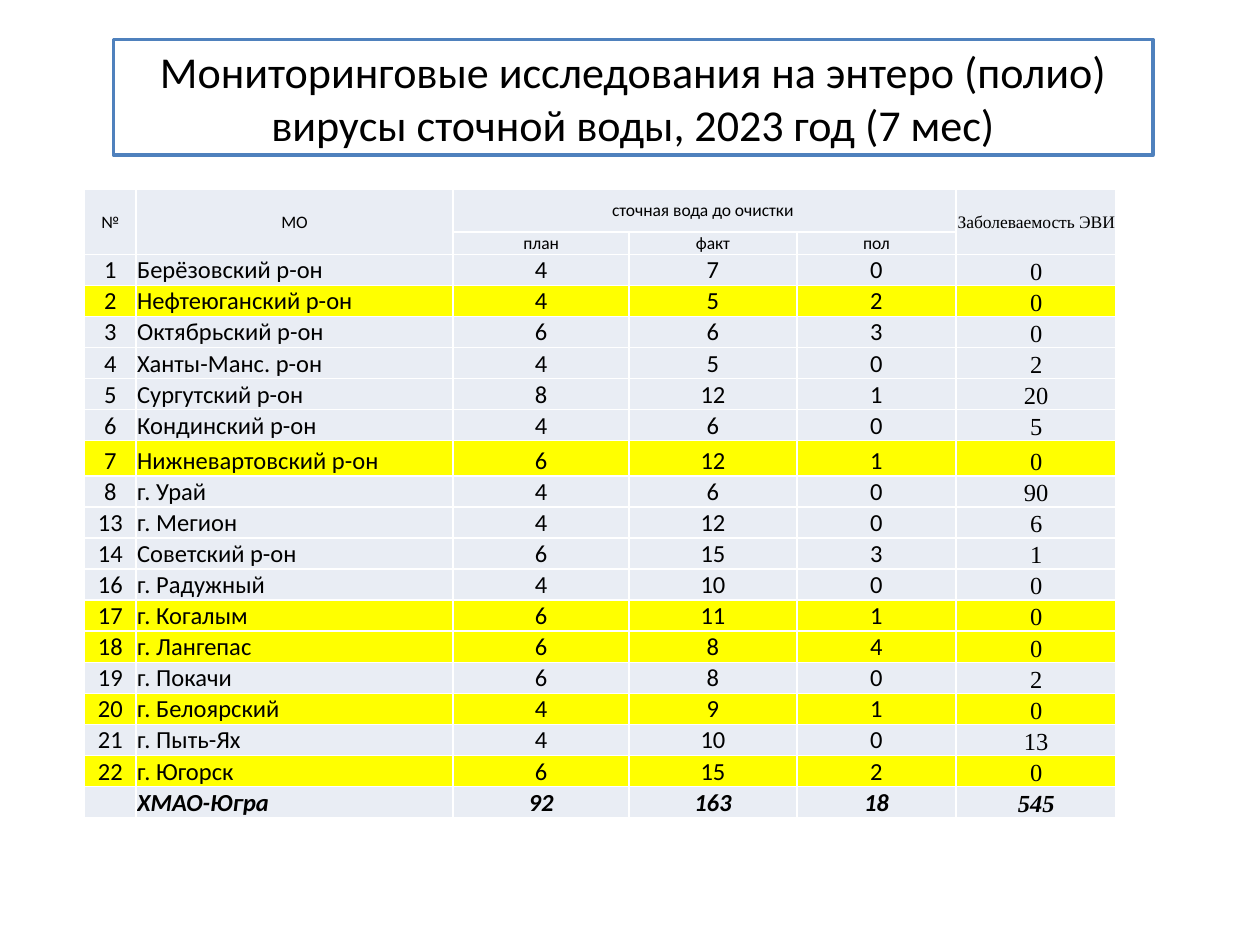
from lxml import etree
from pptx import Presentation
from pptx.dml.color import RGBColor
from pptx.enum.shapes import MSO_SHAPE
from pptx.enum.text import MSO_ANCHOR, PP_ALIGN
from pptx.oxml.ns import qn
from pptx.util import Pt

RECTANGLE = MSO_SHAPE.RECTANGLE
MIDDLE, BOTTOM = MSO_ANCHOR.MIDDLE, MSO_ANCHOR.BOTTOM
LEFT, CENTER = PP_ALIGN.LEFT, PP_ALIGN.CENTER

BLACK, WHITE, BLUE = "000000", "FFFFFF", "4F81BD"
PALE, YELLOW = "E9EDF4", "FFFF00"
SANS, SERIF = "Calibri", "Times New Roman"

TITLE = "Мониторинговые исследования на энтеро (полио) вирусы сточной воды, 2023 год (7 мес)"
COLUMN_WIDTHS = [29.3, 181.3, 100.6, 95.8, 91.1, 91.5]
NAME_COLUMN, INCIDENCE_COLUMN = 1, 5
HEADER_HEIGHTS = [24.5, 12.6]
DATA_HEIGHT, TALL_HEIGHT = 17.6, 20.2
TALL_NUMBER = "7"
HIGHLIGHTED_NUMBERS = {"2", "7", "17", "18", "20", "22"}

HEADERS = [
    ["№", "МО", "сточная вода до очистки ", "", "", "Заболеваемость ЭВИ "],
    ["", "", "план", "факт", "пол", ""],
]
HEADER_SPANS = [((0, 0), (1, 0)), ((0, 1), (1, 1)), ((0, 2), (0, 4)), ((0, 5), (1, 5))]
DISTRICTS = [
    ["1", "Берёзовский р-он", "4", "7", "0", "0"],
    ["2", "Нефтеюганский р-он", "4", "5", "2", "0"],
    ["3", "Октябрьский р-он", "6", "6", "3", "0"],
    ["4", "Ханты-Манс. р-он", "4", "5", "0", "2"],
    ["5", "Сургутский р-он", "8", "12", "1", "20"],
    ["6", "Кондинский р-он", "4", "6", "0", "5"],
    ["7", "Нижневартовский р-он", "6", "12", "1", "0"],
    ["8", "г. Урай", "4", "6", "0", "90"],
    ["13", "г. Мегион", "4", "12", "0", "6"],
    ["14", "Советский р-он", "6", "15", "3", "1"],
    ["16", "г. Радужный", "4", "10", "0", "0"],
    ["17", "г. Когалым", "6", "11", "1", "0"],
    ["18", "г. Лангепас", "6", "8", "4", "0"],
    ["19", "г. Покачи", "6", "8", "0", "2"],
    ["20", "г. Белоярский", "4", "9", "1", "0"],
    ["21", "г. Пыть-Ях", "4", "10", "0", "13"],
    ["22", "г. Югорск", "6", "15", "2", "0"],
]
TOTAL = ["", "ХМАО-Югра", "92", "163", "18", "545"]


def color(hex_string):
    return RGBColor.from_string(hex_string)


def fill_solid(item, hex_string):
    item.fill.solid()
    item.fill.fore_color.rgb = color(hex_string)


def format_text(text_frame, size, font_name, alignment, emphasis=False):
    paragraph = text_frame.paragraphs[0]
    paragraph.alignment = alignment
    for run in paragraph.runs:
        run.font.size = Pt(size)
        run.font.name = font_name
        run.font.color.rgb = color(BLACK)
        run.font.bold = run.font.italic = emphasis
    if not paragraph.runs:
        etree.SubElement(paragraph._p, qn("a:endParaRPr"), sz=str(size * 100))


def add_title(slide):
    shape = slide.shapes.add_shape(RECTANGLE, Pt(64.8), Pt(22.5), Pt(594), Pt(66.2))
    shape.shadow.inherit = False
    fill_solid(shape, WHITE)
    shape.line.color.rgb = color(BLUE)
    shape.line.width = Pt(2)
    text_frame = shape.text_frame
    text_frame.text = TITLE
    text_frame.word_wrap = True
    text_frame.vertical_anchor = MIDDLE
    format_text(text_frame, 25.2, SANS, CENTER)


def add_borders(cell, hex_string, width):
    properties = cell._tc.get_or_add_tcPr()
    for side in ("lnL", "lnR", "lnT", "lnB"):
        line = etree.SubElement(properties, qn(f"a:{side}"), w=str(Pt(width)))
        fill = etree.SubElement(line, qn("a:solidFill"))
        etree.SubElement(fill, qn("a:srgbClr"), val=hex_string)


def format_cell(cell, text, column, fill, size, anchor, emphasis):
    cell.text = text
    cell.margin_left = cell.margin_right = cell.margin_top = Pt(0.7)
    cell.margin_bottom = Pt(0)
    cell.vertical_anchor = anchor
    add_borders(cell, WHITE, 1)
    fill_solid(cell, fill)
    font_name = SERIF if column == INCIDENCE_COLUMN else SANS
    is_name = column == NAME_COLUMN and anchor == BOTTOM
    format_text(cell.text_frame, size, font_name, LEFT if is_name else CENTER, emphasis)


def add_monitoring_table(slide):
    rows = HEADERS + DISTRICTS + [TOTAL]
    heights = HEADER_HEIGHTS + [
        TALL_HEIGHT if row[0] == TALL_NUMBER else DATA_HEIGHT for row in DISTRICTS + [TOTAL]
    ]
    table = slide.shapes.add_table(
        len(rows), len(COLUMN_WIDTHS), Pt(48.4), Pt(108), Pt(sum(COLUMN_WIDTHS)), Pt(sum(heights))
    ).table
    table.first_row = table.horz_banding = False
    for column, width in zip(table.columns, COLUMN_WIDTHS):
        column.width = Pt(width)
    for row_index, (values, height) in enumerate(zip(rows, heights)):
        table.rows[row_index].height = Pt(height)
        is_header = row_index < len(HEADERS)
        size, anchor = (10, MIDDLE) if is_header else (14, BOTTOM)
        fill = YELLOW if values[0] in HIGHLIGHTED_NUMBERS else PALE
        for column_index, text in enumerate(values):
            cell = table.cell(row_index, column_index)
            format_cell(cell, text, column_index, fill, size, anchor, values is TOTAL)
    for first, last in HEADER_SPANS:
        table.cell(*first).merge(table.cell(*last))


def main():
    presentation = Presentation()
    presentation.slide_width, presentation.slide_height = Pt(720), Pt(540)
    slide = presentation.slides.add_slide(presentation.slide_layouts[6])
    add_title(slide)
    add_monitoring_table(slide)
    presentation.save("out.pptx")


if __name__ == "__main__":
    main()
